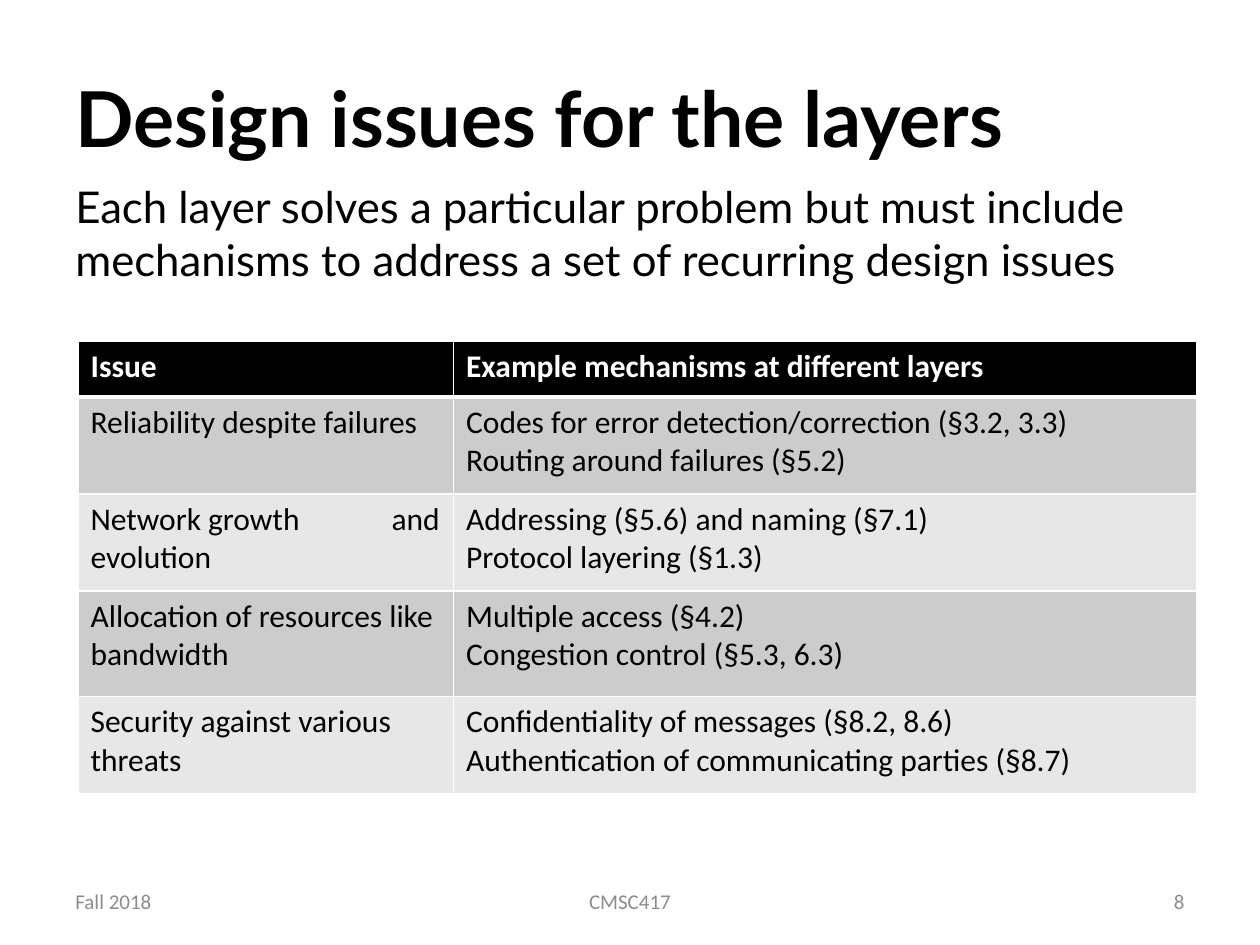
from lxml import etree
from pptx import Presentation
from pptx.dml.color import RGBColor
from pptx.enum import text
from pptx.oxml import ns
from pptx.util import Pt

BLACK = RGBColor(0x00, 0x00, 0x00)
WHITE = RGBColor(0xFF, 0xFF, 0xFF)
GRAY = RGBColor(0x8C, 0x8C, 0x8C)
BANDS = (RGBColor(0xCC, 0xCC, 0xCC), RGBColor(0xE7, 0xE7, 0xE7))

LEFT, CENTER, RIGHT = text.PP_ALIGN.LEFT, text.PP_ALIGN.CENTER, text.PP_ALIGN.RIGHT
TOP, MIDDLE = text.MSO_ANCHOR.TOP, text.MSO_ANCHOR.MIDDLE

COLUMNS = (214.6, 424.8)
ROW_HEIGHTS = (31.7, 55.4, 55.4, 60.5, 55.4)
AND_TAB = 172
ROWS = (
    (("Issue",), ("Example mechanisms at different layers",)),
    (("Reliability despite failures",),
     ("Codes for error detection/correction (§3.2, 3.3)", "Routing around failures (§5.2)")),
    (("Network growth\tand evolution",),
     ("Addressing (§5.6) and naming (§7.1)", "Protocol layering (§1.3)")),
    (("Allocation of resources like bandwidth",),
     ("Multiple access (§4.2)", "Congestion control (§5.3, 6.3)")),
    (("Security against various threats",),
     ("Confidentiality of messages (§8.2, 8.6)", "Authentication of communicating parties (§8.7)")),
)


def write(tf, *lines, size=18, font="Calibri", color=BLACK, bold=False, align=LEFT):
    for i, line in enumerate(lines):
        p = tf.add_paragraph() if i else tf.paragraphs[0]
        p.alignment = align
        r = p.add_run()
        r.text = line
        r.font.size = Pt(size)
        r.font.name = font
        r.font.bold = bold
        r.font.color.rgb = color
        if "\t" in line:
            add_tab_stop(p, AND_TAB)


def add_tab_stop(p, position):
    tabs = etree.SubElement(p._p.get_or_add_pPr(), ns.qn("a:tabLst"))
    etree.SubElement(tabs, ns.qn("a:tab"), pos=str(Pt(position)), algn="l")


def add_text(s, line, left, top, width, height, anchor=MIDDLE, **style):
    tf = s.shapes.add_textbox(Pt(left), Pt(top), Pt(width), Pt(height)).text_frame
    tf.word_wrap = True
    tf.vertical_anchor = anchor
    write(tf, line, **style)


def set_borders(cell, **widths):
    pr = cell._tc.get_or_add_tcPr()
    for i, side in enumerate("LRTB"):
        ln = etree.Element(ns.qn(f"a:ln{side}"), w=str(Pt(widths.get(side, 1))))
        fill = etree.SubElement(ln, ns.qn("a:solidFill"))
        etree.SubElement(fill, ns.qn("a:srgbClr"), val=str(WHITE))
        pr.insert(i, ln)


def add_issue_table(s, left, top):
    table = s.shapes.add_table(len(ROWS), len(COLUMNS), Pt(left), Pt(top),
                               Pt(sum(COLUMNS)), Pt(sum(ROW_HEIGHTS))).table
    for column, width in zip(table.columns, COLUMNS):
        column.width = Pt(width)
    for i, (row, height) in enumerate(zip(ROWS, ROW_HEIGHTS)):
        table.rows[i].height = Pt(height)
        header = i == 0
        for j, lines in enumerate(row):
            cell = table.cell(i, j)
            cell.fill.solid()
            cell.fill.fore_color.rgb = BLACK if header else BANDS[(i - 1) % 2]
            set_borders(cell, T=3 if i == 1 else 1, B=3 if header else 1)
            write(cell.text_frame, *lines, color=WHITE if header else BLACK, bold=header)


def add_footer(s):
    for line, left, width, align in (("Fall 2018", 36, 168, LEFT),
                                     ("CMSC417", 246, 228, CENTER),
                                     ("8", 516, 168, RIGHT)):
        add_text(s, line, left, 500.4, width, 28.8, size=12, color=GRAY, align=align)


def main():
    prs = Presentation()
    prs.slide_width, prs.slide_height = Pt(720), Pt(540)
    s = prs.slides.add_slide(prs.slide_layouts[6])
    add_text(s, "Design issues for the layers", 36, 21.6, 648, 90,
             size=44, font="Lato", bold=True)
    add_text(s, "Each layer solves a particular problem but must include "
             "mechanisms to address a set of recurring design issues",
             36, 99.4, 648, 69.8, anchor=TOP, size=25, font="Lato")
    add_footer(s)
    add_issue_table(s, 44.6, 195.1)
    prs.save("out.pptx")


if __name__ == "__main__":
    main()
